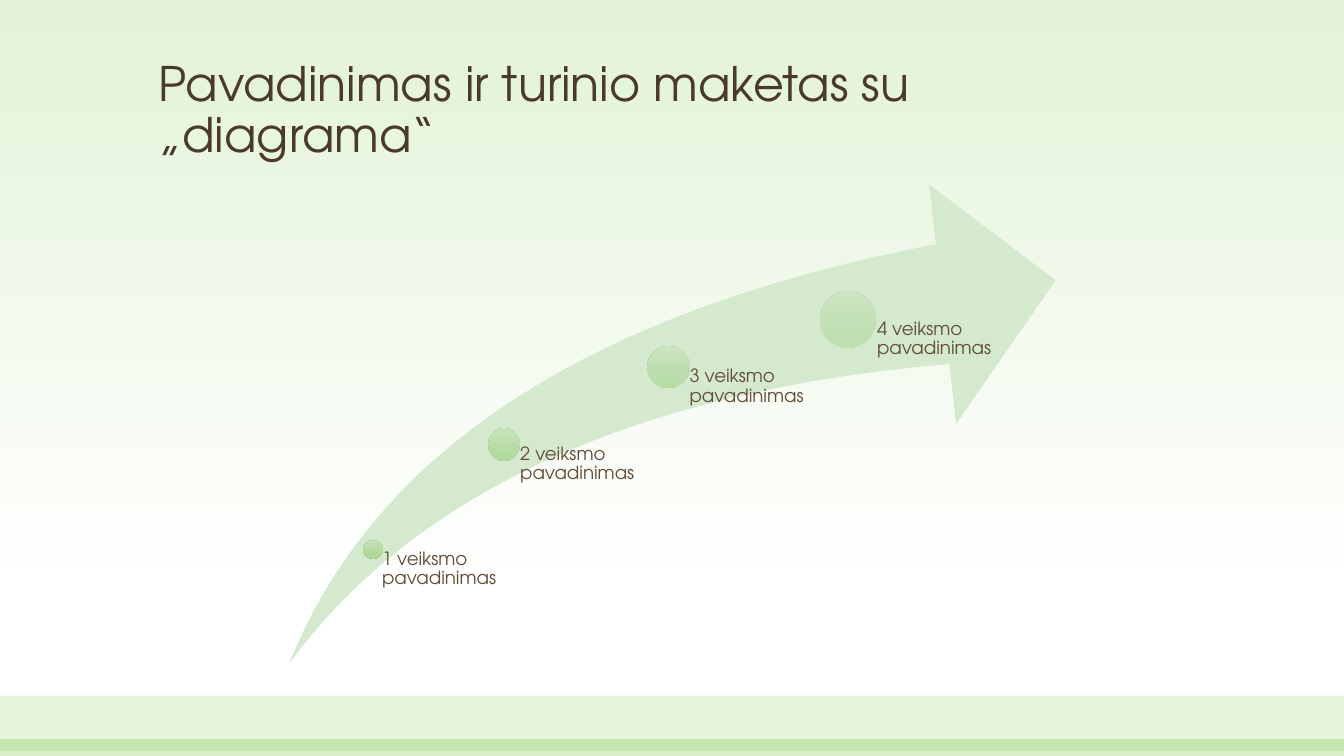
from dataclasses import dataclass

from lxml import etree
from pptx import Presentation
from pptx import util as u
from pptx.dml.color import RGBColor
from pptx.enum import shapes, text
from pptx.oxml.ns import qn


@dataclass(frozen=True)
class Theme:
    font: str = "TeX Gyre Adventor"
    title_size: int = 34
    label_size: int = 13
    title_color: str = "4A3A2A"
    label_color: str = "624D38"
    band: str = "72C23C"
    arrow: str = "D5E9CE"
    sky: tuple = ((0, "E3F3D8"), (79, "FFFFFF"))
    dot: tuple = ((0, "C8E5BC"), (50, "B3DBA2"), (100, "A4D78D"))


def inches(box):
    return [u.Inches(v) for v in box]


def set_all(target, values):
    for name, value in values.items():
        setattr(target, name, value)


class SlideBuilder:
    def __init__(self, s, theme):
        self.s = s
        self.theme = theme

    def add_alpha(self, color, alpha):
        etree.SubElement(color, qn("a:alpha"), val=str(alpha * 1000))

    def gradient(self, fill, element, stops, alpha=100):
        fill.gradient()
        fill.gradient_angle = 270
        stop_list = next(element.iter(qn("a:gsLst")))
        for stop in list(stop_list):
            stop_list.remove(stop)
        for position, rgb in stops:
            stop = etree.SubElement(stop_list, qn("a:gs"), pos=str(position * 1000))
            color = etree.SubElement(stop, qn("a:srgbClr"), val=rgb)
            if alpha < 100:
                self.add_alpha(color, alpha)

    def background(self):
        self.gradient(self.s.background.fill, self.s.element, self.theme.sky)

    def shape(self, kind, box, rgb=None, alpha=100):
        sp = self.s.shapes.add_shape(kind, *inches(box))
        sp.shadow.inherit = False
        sp.line.fill.background()
        if rgb:
            sp.fill.solid()
            sp.fill.fore_color.rgb = RGBColor.from_string(rgb)
            if alpha < 100:
                self.add_alpha(next(sp.element.spPr.iter(qn("a:srgbClr"))), alpha)
        return sp

    def dot(self, x, y, size, alpha):
        box = (x - size / 2, y - size / 2, size, size)
        sp = self.shape(shapes.MSO_SHAPE.OVAL, box)
        self.gradient(sp.fill, sp.element, self.theme.dot, alpha)

    def add_words(self, tf, words, size, rgb, **paragraph):
        p = tf.paragraphs[0]
        set_all(p, {"line_spacing": 0.9, "alignment": text.PP_ALIGN.LEFT, **paragraph})
        r = p.add_run()
        r.text = words
        set_all(r.font, {"name": self.theme.font, "size": u.Pt(size)})
        r.font.color.rgb = RGBColor.from_string(rgb)

    def title(self, words, box):
        sp = self.s.shapes.title
        set_all(sp, dict(zip(("left", "top", "width", "height"), inches(box))))
        tf = sp.text_frame
        set_all(tf, {"word_wrap": True, "auto_size": text.MSO_AUTO_SIZE.NONE,
                     "vertical_anchor": text.MSO_ANCHOR.BOTTOM})
        self.add_words(tf, words, self.theme.title_size, self.theme.title_color)

    def label(self, words, box, inset):
        tf = self.s.shapes.add_textbox(*inches(box)).text_frame
        set_all(tf, {"word_wrap": True, "margin_left": u.Inches(inset),
                     "margin_top": 0, "margin_right": 0, "margin_bottom": 0})
        self.add_words(tf, words, self.theme.label_size, self.theme.label_color,
                       space_after=u.Pt(4.5))


def main():
    prs = Presentation()
    set_all(prs, {"slide_width": u.Inches(13.33), "slide_height": u.Inches(7.5)})
    theme = Theme()
    slide = SlideBuilder(prs.slides.add_slide(prs.slide_layouts[5]), theme)
    slide.background()

    for top, height, alpha in ((6.9, 0.55, 17), (7.33, 0.17, 28)):
        slide.shape(shapes.MSO_SHAPE.RECTANGLE, (0, top, 13.33, height), theme.band, alpha)
    slide.title("Pavadinimas ir turinio maketas su „diagrama“", (1.47, 0.48, 10.4, 1.19))

    arrow_bottom = 6.58
    arrow = slide.shape(shapes.MSO_SHAPE.SWOOSH_ARROW,
                        (2.87, 1.83, 7.6, arrow_bottom - 1.83), theme.arrow)
    arrow.adjustments[0] = arrow.adjustments[1] = 0.25

    steps = (
        (3.7, 5.45, 0.18, 1.3, 0.09),
        (5, 4.41, 0.31, 1.6, 0.16),
        (6.63, 3.64, 0.41, 1.6, 0.21),
        (8.41, 3.17, 0.55, 1.6, 0.29),
    )
    for i, (x, y, size, width, inset) in enumerate(steps):
        slide.dot(x, y, size, round(90 - 40 * i / 3))
        slide.label(f"{i + 1} veiksmo pavadinimas", (x, y, width, arrow_bottom - y), inset)

    prs.save("out.pptx")


if __name__ == "__main__":
    main()
